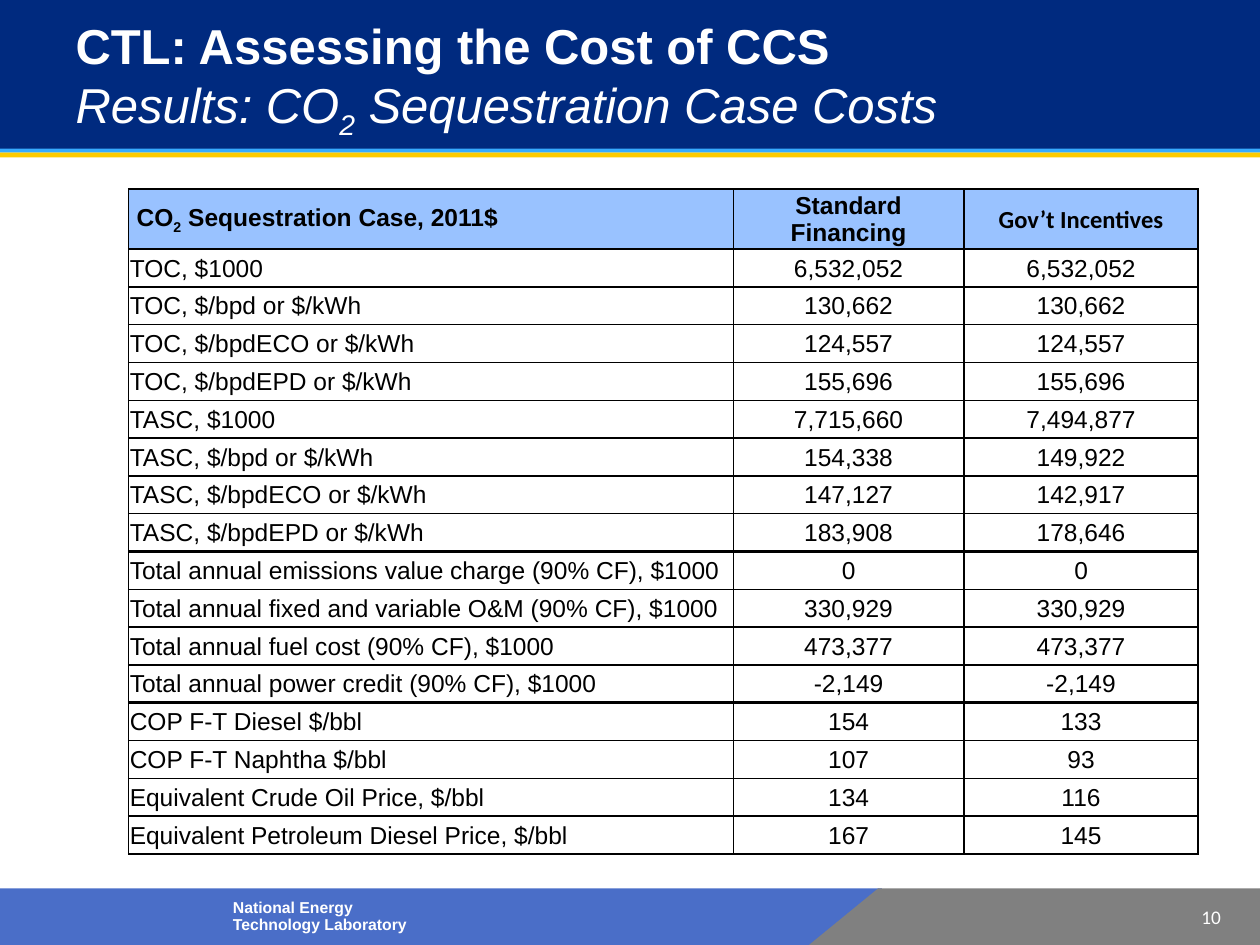
"""Build the slide of carbon sequestration case costs."""
import pptx
import pptx.dml.color
import pptx.enum.shapes
import pptx.enum.text
import pptx.oxml
import pptx.oxml.ns
import pptx.util

Pt = pptx.util.Pt
SHAPE = pptx.enum.shapes.MSO_SHAPE
ALIGN = pptx.enum.text.PP_ALIGN
MIDDLE = pptx.enum.text.MSO_ANCHOR.MIDDLE
COLORS = {
    "navy": "002A7F", "sky": "37ABFF", "gold": "FECB00", "blue": "4A6EC8",
    "gray": "808080", "header": "99C2FF", "white": "FFFFFF", "black": "000000",
}


def style(paragraph, size, color, name="Arial", bold=None, align=ALIGN.LEFT):
    paragraph.alignment = align
    paragraph.font.size = Pt(size)
    paragraph.font.name = name
    paragraph.font.bold = bold
    paragraph.font.color.rgb = pptx.dml.color.RGBColor.from_string(COLORS[color])


def add_box(left, top, width, height, side, edge):
    box = page.shapes.add_textbox(Pt(left), Pt(top), Pt(width), Pt(height))
    frame = box.text_frame
    frame.word_wrap = True
    frame.vertical_anchor = MIDDLE
    frame.margin_left = frame.margin_right = Pt(side)
    frame.margin_top = frame.margin_bottom = Pt(edge)
    return frame.paragraphs[0]


deck = pptx.Presentation()
deck.slide_width, deck.slide_height = Pt(720), Pt(540)
page = deck.slides.add_slide(deck.slide_layouts[6])

bands = [
    (SHAPE.RECTANGLE, 0, 507.6, 504, 32.4, "blue"),
    (SHAPE.RECTANGLE, 501.84, 507.6, 218.16, 32.4, "gray"),
    (SHAPE.ISOSCELES_TRIANGLE, 462.24, 507.6, 39.6, 32.4, "gray"),
    (SHAPE.RECTANGLE, 0, 87.12, 720, 2.88, "gold"),
    (SHAPE.RECTANGLE, 0, 81.36, 720, 5.76, "sky"),
    (SHAPE.RECTANGLE, 0, 0, 720, 84.96, "navy"),
]
for kind, left, top, width, height, color in bands:
    if color == "navy":
        height = 81.36 + 3.6
    band = page.shapes.add_shape(kind, Pt(left), Pt(top), Pt(width), Pt(height))
    band.shadow.inherit = False
    band.fill.solid()
    band.fill.fore_color.rgb = pptx.dml.color.RGBColor.from_string(COLORS[color])
    band.line.fill.background()
    if kind == SHAPE.ISOSCELES_TRIANGLE:
        band.adjustments[0] = 1

number = add_box(665.28, 516.96, 32.4, 13.68, 0, 0)
number.text = "10"
style(number, 11, "white", "Calibri", align=ALIGN.RIGHT)

laboratory = add_box(126, 510.48, 128.16, 26.64, 7.2, 3.6)
laboratory.text = "National Energy Technology Laboratory"
laboratory.line_spacing = 0.9
style(laboratory, 9, "white", bold=True)

title = add_box(43.2, 7.2, 568.8, 74.88, 0, 3.6)
style(title, 28, "white")
span = title.add_run()
span.text = "CTL: Assessing the Cost of CCS"
span.font.bold = True
title.add_line_break()
for text in ("Results: CO", "2", " Sequestration Case Costs"):
    span = title.add_run()
    span.text = text
    span.font.italic = True
    if text == "2":
        span.font._element.set("baseline", "-25000")

rows = [
    (" CO2 Sequestration Case, 2011$", "Standard Financing", "Gov’t Incentives"),
    ("TOC, $1000", "6,532,052", "6,532,052"),
    ("TOC, $/bpd or $/kWh", "130,662", "130,662"),
    ("TOC, $/bpdECO or $/kWh", "124,557", "124,557"),
    ("TOC, $/bpdEPD or $/kWh", "155,696", "155,696"),
    ("TASC, $1000", "7,715,660", "7,494,877"),
    ("TASC, $/bpd or $/kWh", "154,338", "149,922"),
    ("TASC, $/bpdECO or $/kWh", "147,127", "142,917"),
    ("TASC, $/bpdEPD or $/kWh", "183,908", "178,646"),
    ("Total annual emissions value charge (90% CF), $1000", "0", "0"),
    ("Total annual fixed and variable O&M (90% CF), $1000", "330,929", "330,929"),
    ("Total annual fuel cost (90% CF), $1000", "473,377", "473,377"),
    ("Total annual power credit (90% CF), $1000", "-2,149", "-2,149"),
    ("COP F-T Diesel $/bbl", "154", "133"),
    ("COP F-T Naphtha $/bbl", "107", "93"),
    ("Equivalent Crude Oil Price, $/bbl", "134", "116"),
    ("Equivalent Petroleum Diesel Price, $/bbl", "167", "145"),
]
section_ends = (8, 12)
widths = (345.6, 131.76, 133.92)
row_height = 21.6
table = page.shapes.add_table(
    len(rows), len(widths), Pt(73.44), Pt(108), Pt(sum(widths)), Pt(row_height * len(rows))
).table
for column, width in zip(table.columns, widths):
    column.width = Pt(width)

for row_index, values in enumerate(rows):
    table.rows[row_index].height = Pt(row_height)
    is_header = row_index == 0
    for column_index, value in enumerate(values):
        cell = table.cell(row_index, column_index)
        cell.vertical_anchor = MIDDLE
        cell.margin_left = cell.margin_right = cell.margin_top = Pt(0.72)
        cell.margin_bottom = 0
        borders = {"L": 1, "R": 1, "T": 1, "B": 1}
        if row_index in section_ends:
            borders["B"] = 2.25
        if row_index - 1 in section_ends:
            borders["T"] = 2.25
        properties = cell._tc.get_or_add_tcPr()
        for side, weight in borders.items():
            properties.append(pptx.oxml.parse_xml(
                f'<a:ln{side} {pptx.oxml.ns.nsdecls("a")} w="{Pt(weight)}"><a:solidFill>'
                f'<a:srgbClr val="{COLORS["black"]}"/></a:solidFill></a:ln{side}>'
            ))
        cell.fill.solid()
        fill_color = COLORS["header" if is_header else "white"]
        cell.fill.fore_color.rgb = pptx.dml.color.RGBColor.from_string(fill_color)

        para = cell.text_frame.paragraphs[0]
        font_name = "Calibri" if is_header and column_index == 2 else "Arial"
        align = ALIGN.CENTER if column_index else ALIGN.LEFT
        style(para, 14, "black", font_name, is_header, align)
        parts = value.partition("2") if is_header and column_index == 0 else (value,)
        for part in parts:
            span = para.add_run()
            span.text = part
            if is_header and part == "2":
                span.font._element.set("baseline", "-25000")

deck.save("out.pptx")
